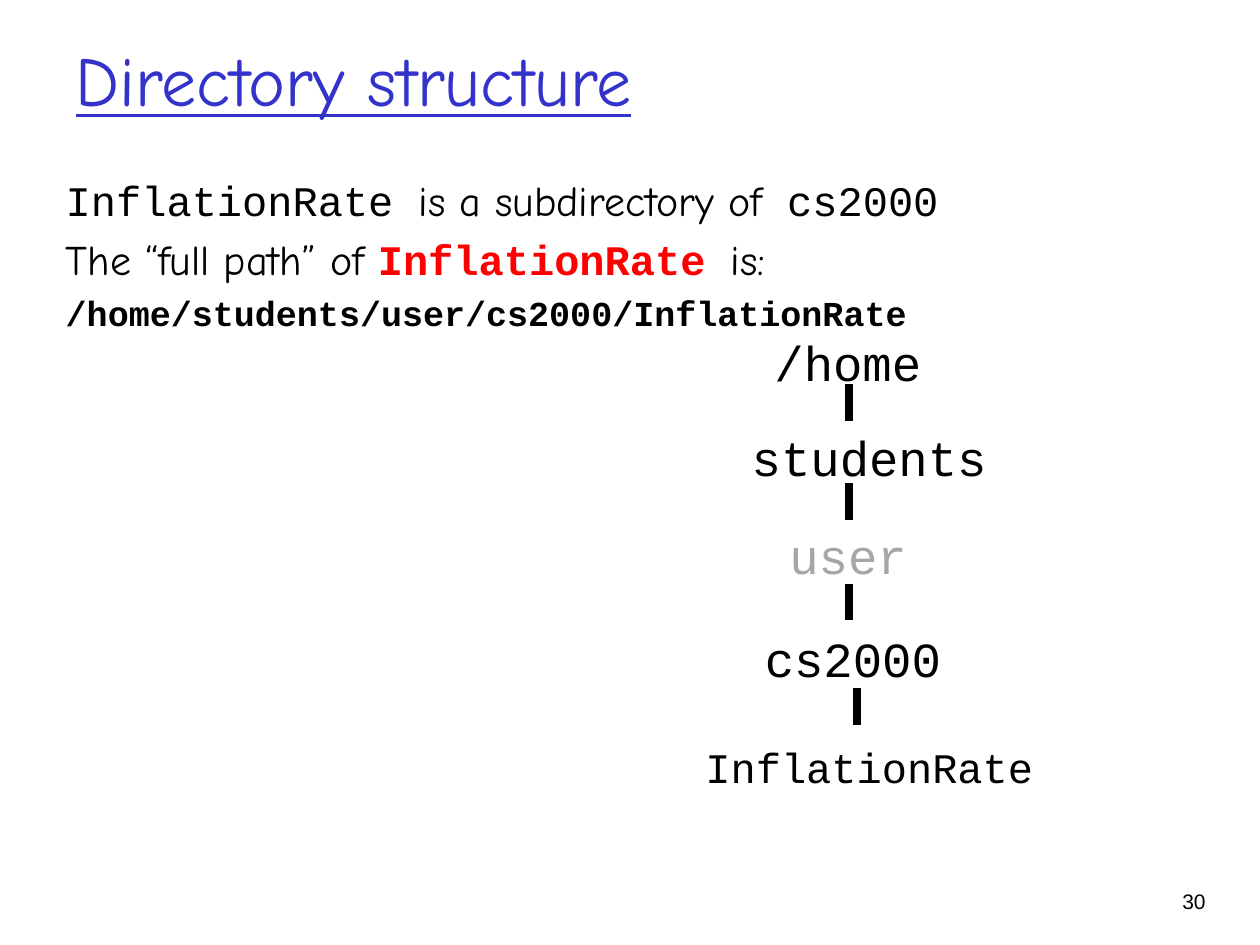
import pptx
import pptx.util
import pptx.dml.color
import pptx.enum.shapes
import pptx.enum.text
import lxml.etree

Pt = pptx.util.Pt
ALIGN = pptx.enum.text.PP_ALIGN
ANCHOR = pptx.enum.text.MSO_ANCHOR
COLORS = {"blue": "3333CC", "black": "000000", "red": "FF0000", "gray": "A6A6A6"}
HAND, MONO, SANS = "Comic Neue", "Courier New", "Arial"

TITLE = "Directory structure"
# Each paragraph is a list of runs: text, size, font, colour, bold
BODY = [
    [("InflationRate ", 24, MONO, "black", False),
     ("is a subdirectory of", 24, HAND, "black", False),
     (" cs2000", 24, MONO, "black", False)],
    [("The “full path” of ", 24, HAND, "black", False),
     ("InflationRate ", 24, MONO, "red", True),
     ("is:", 24, HAND, "black", False)],
    [("/home/students/user/cs2000/InflationRate", 20, MONO, "black", True)],
]
# Folder name, left, top, width, size, colour
TREE = [
    ("/home", 435.5, 186.5, 99.5, 28, "black"),
    ("students", 422.5, 241, 150, 28, "black"),
    ("user", 444, 296.5, 82, 28, "gray"),
    ("cs2000", 430, 355.5, 116, 28, "black"),
    ("InflationRate", 396, 420, 203, 24, "black"),
]
# Centre and top of the bar below each folder
BARS = [(485.3, 219.5), (485.3, 276), (485.3, 333.5), (489.6, 393)]
BAR_LEN, BAR_WIDTH = 21, 4.5
PAGE = "30"


def color(name):
    return pptx.dml.color.RGBColor.from_string(COLORS[name])


def add_run(para, text, size, face, hue, bold=False):
    run = para.add_run()
    run.text = text
    font = run.font
    font.size, font.name, font.bold = Pt(size), face, bold
    font.color.rgb = color(hue)
    return run


def add_text(slide, box, paras, wrap=True, align=ALIGN.LEFT, gap=0):
    """Add a text box; paras is a list of run lists, gap the space before each."""
    frame = slide.shapes.add_textbox(*map(Pt, box)).text_frame
    frame.word_wrap = wrap
    for i, runs in enumerate(paras):
        para = frame.add_paragraph() if i else frame.paragraphs[0]
        para.alignment, para.space_before = align, Pt(gap)
        for run in runs:
            add_run(para, *run)


def add_bar(slide, x, top):
    bar = slide.shapes.add_connector(
        pptx.enum.shapes.MSO_CONNECTOR.STRAIGHT,
        Pt(x), Pt(top), Pt(x), Pt(top + BAR_LEN))
    bar.line.width = Pt(BAR_WIDTH)
    bar.line.color.rgb = color("black")
    lxml.etree.SubElement(bar.element.spPr, pptx.oxml.ns.qn("a:effectLst"))


def add_title(slide):
    title = slide.shapes.title
    title.left, title.top, title.width, title.height = map(Pt, (36, 0, 648, 90))
    frame = title.text_frame
    frame.vertical_anchor = ANCHOR.MIDDLE
    para = frame.paragraphs[0]
    para.alignment = ALIGN.LEFT
    add_run(para, TITLE, 40, HAND, "blue").font.underline = True


def main():
    deck = pptx.Presentation()
    deck.slide_width, deck.slide_height = Pt(720), Pt(540)
    slide = deck.slides.add_slide(deck.slide_layouts[5])
    add_title(slide)
    add_text(slide, (30.5, 96, 648, 444), BODY, gap=4.8)
    add_text(slide, (643, 504, 53, 36),
             [[(PAGE, 12, SANS, "black")]], align=ALIGN.RIGHT)
    for name, left, top, width, size, hue in TREE:
        add_text(slide, (left, top, width, size + 13),
                 [[(name, size, MONO, hue)]], wrap=False)
    for x, top in BARS:
        add_bar(slide, x, top)
    deck.save("out.pptx")


if __name__ == "__main__":
    main()
